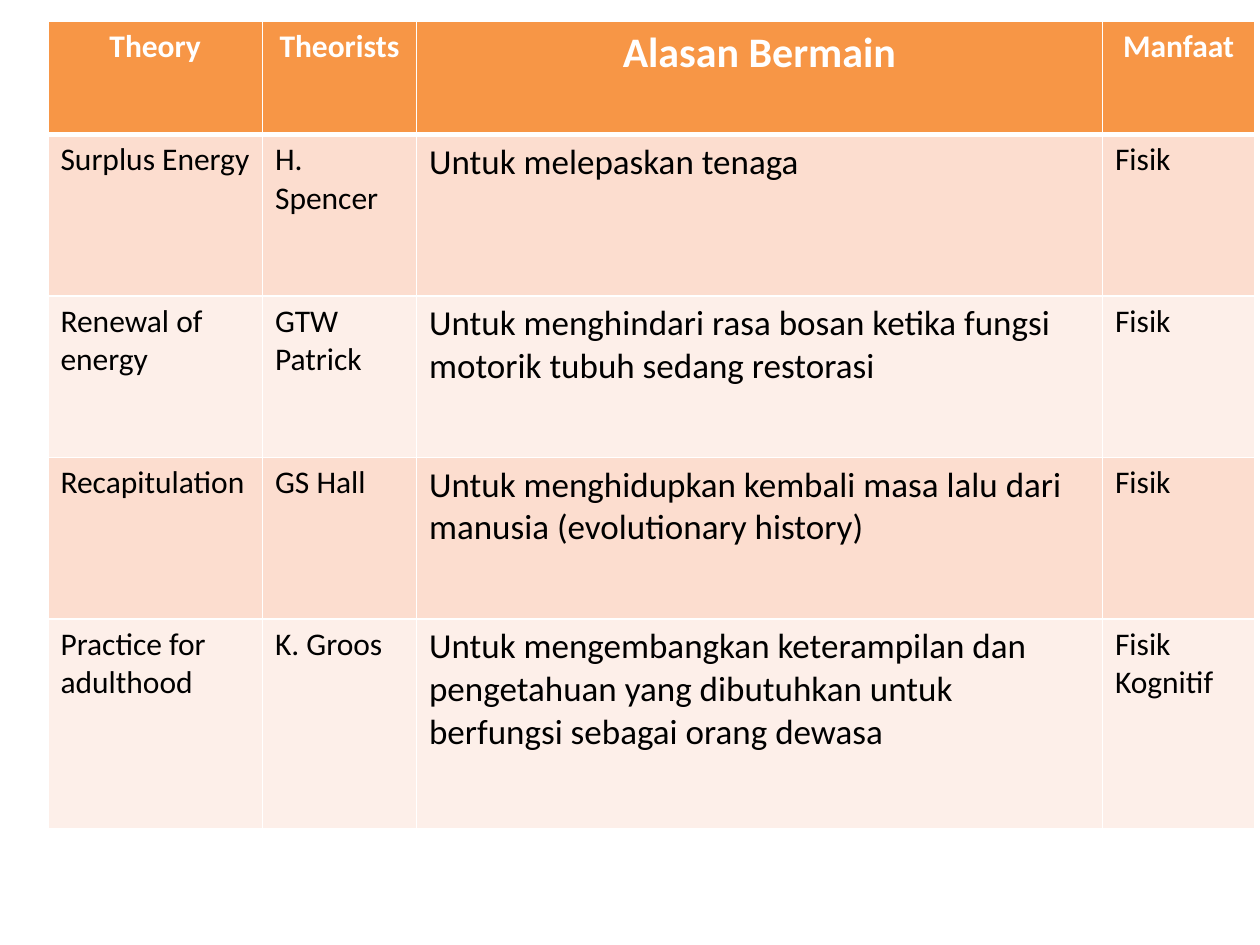
from dataclasses import dataclass

from lxml import etree
from pptx import Presentation
from pptx import util as u
from pptx.dml.color import RGBColor
from pptx.enum import text
from pptx.oxml.ns import qn


@dataclass
class Theme:
    font: str = "Calibri"
    head: str = "F79646"
    bands: tuple = ("FCDDCF", "FDEFE9")
    ink: str = "000000"
    white: str = "FFFFFF"
    small: int = 18
    body: int = 20
    large: int = 24
    thin: int = 1
    thick: int = 3


class Deck:
    """Draws elements on the current slide in one theme."""

    def __init__(self, theme, wide, high):
        self.theme = theme
        self.file = Presentation()
        self.file.slide_width, self.file.slide_height = u.Pt(wide), u.Pt(high)
        self.slide = None

    def page(self):
        self.slide = self.file.slides.add_slide(self.file.slide_layouts[6])

    def edge(self, cell, side, width):
        line = etree.SubElement(cell._tc.get_or_add_tcPr(), qn("a:ln" + side), w=str(u.Pt(width)))
        fill = etree.SubElement(line, qn("a:solidFill"))
        etree.SubElement(fill, qn("a:srgbClr"), val=self.theme.white)

    def label(self, cell, words, size, head):
        frame = cell.text_frame
        for i, part in enumerate(words.split("\n")):
            para = frame.add_paragraph() if i else frame.paragraphs[0]
            para.alignment = text.PP_ALIGN.CENTER if head else text.PP_ALIGN.LEFT
            run = para.add_run()
            run.text = part
            font = run.font
            font.name, font.size, font.bold = self.theme.font, u.Pt(size), head
            font.color.rgb = RGBColor.from_string(self.theme.white if head else self.theme.ink)

    def cell(self, cell, words, row, size):
        look, head = self.theme, row == 0
        top = look.thick if row == 1 else look.thin
        base = look.thick if head else look.thin
        for side, width in zip("LRTB", (look.thin, look.thin, top, base)):
            self.edge(cell, side, width)
        cell.fill.solid()
        cell.fill.fore_color.rgb = RGBColor.from_string(look.head if head else look.bands[(row - 1) % 2])
        self.label(cell, words, size, head)

    def table(self, left, top, cols, rows, data, main):
        look = self.theme
        grid = self.slide.shapes.add_table(
            len(rows), len(cols), u.Pt(left), u.Pt(top), u.Pt(sum(cols)), u.Pt(sum(rows))
        ).table
        for col, width in zip(grid.columns, cols):
            col.width = u.Pt(width)
        for row, height in zip(grid.rows, rows):
            row.height = u.Pt(height)
        for r, line in enumerate(data):
            for c, words in enumerate(line):
                size = look.small if c != main else look.body if r else look.large
                self.cell(grid.cell(r, c), words, r, size)


THEORY = [
    ("Theory", "Theorists", "Alasan Bermain", "Manfaat"),
    ("Surplus Energy", "H. Spencer", "Untuk melepaskan tenaga", "Fisik"),
    ("Renewal of energy", "GTW Patrick",
     "Untuk menghindari rasa bosan ketika fungsi motorik tubuh sedang restorasi", "Fisik"),
    ("Recapitulation", "GS Hall",
     "Untuk menghidupkan kembali masa lalu dari manusia (evolutionary history)", "Fisik"),
    ("Practice for adulthood", "K. Groos",
     "Untuk mengembangkan keterampilan dan pengetahuan yang dibutuhkan untuk "
     "berfungsi sebagai orang dewasa", "Fisik\nKognitif"),
]


def main():
    deck = Deck(Theme(), 720, 540)
    deck.page()
    deck.table(27.4, 12.2, (122.6, 88, 392, 87), (64.6, 92.3, 92.3, 92.3, 120.2), THEORY, 2)
    deck.file.save("out.pptx")


if __name__ == "__main__":
    main()
